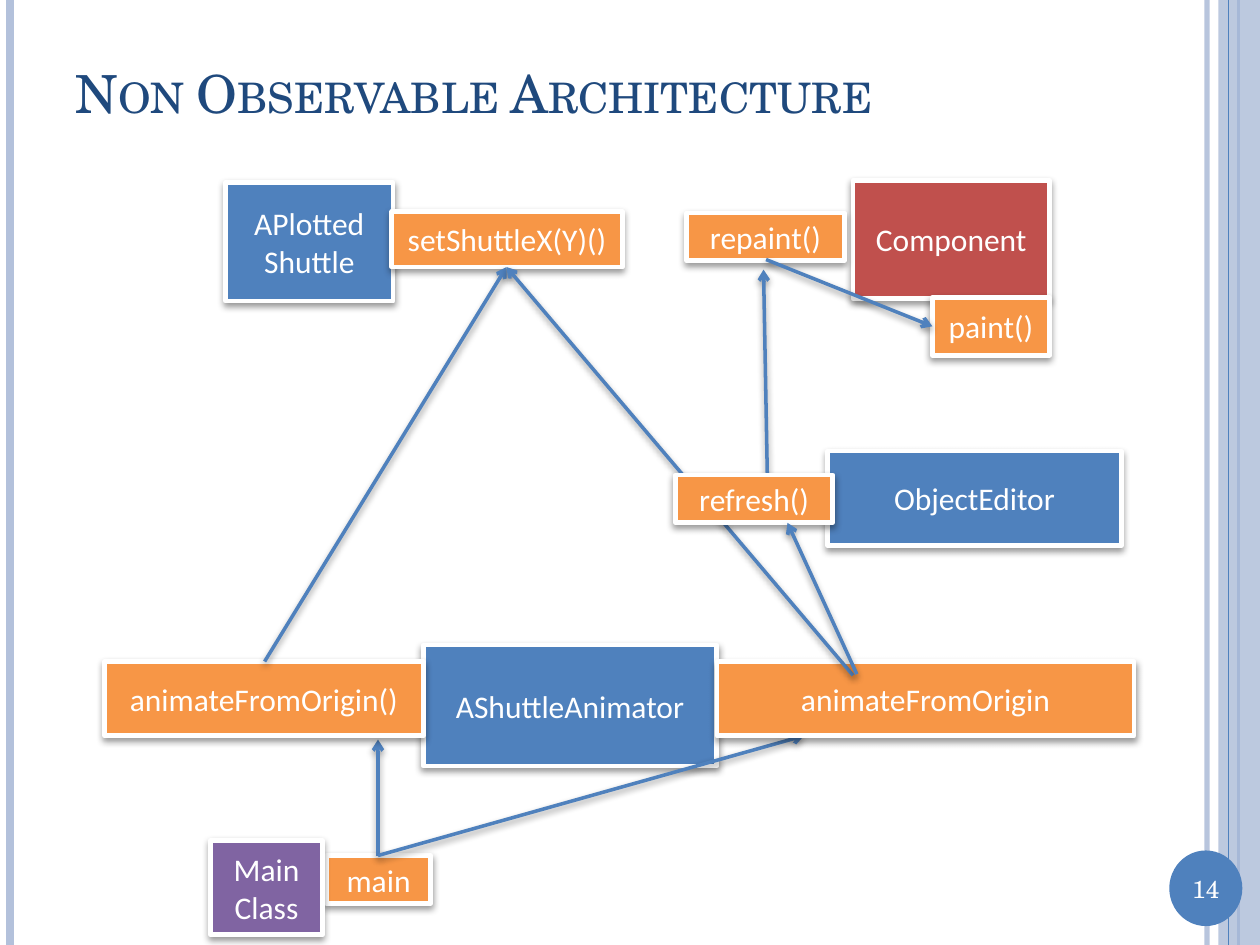
from dataclasses import dataclass

from lxml import etree
from pptx import Presentation
from pptx import util as u
from pptx.dml.color import RGBColor
from pptx.enum import shapes, text
from pptx.oxml import ns

WHITE = RGBColor(0xFF, 0xFF, 0xFF)
BLUE = RGBColor(0x4F, 0x81, 0xBD)
PALE = RGBColor(0xB3, 0xC1, 0xDB)
NAVY = RGBColor(0x1F, 0x49, 0x7D)
ORANGE = RGBColor(0xF7, 0x96, 0x46)
RED = RGBColor(0xC0, 0x50, 0x4D)
PURPLE = RGBColor(0x80, 0x64, 0xA2)
SERIF = "TeX Gyre Schola"
SANS = "Calibri"
SLIDE_H = 7.5


@dataclass
class Box:
    label: str
    left: float
    top: float
    width: float
    height: float
    color: RGBColor = ORANGE


@dataclass
class Call:
    """Arrow from a caller to the method it calls."""
    x1: float
    y1: float
    x2: float
    y2: float


@dataclass
class Rule:
    """Full-height decorative line."""
    x: float
    color: RGBColor
    width: float
    alpha: int = 100


LEFT_RULES = [Rule(9.58, PALE, 3, 93), Rule(0.08, PALE, 4.5), Rule(9.83, BLUE, 1.5)]
EDGE_RULE = Rule(9.75, BLUE, 0.75)

# Back to front
DIAGRAM = [
    Box("APlotted\nShuttle", 1.79, 1.45, 1.33, 0.94, BLUE),
    Box("AShuttleAnimator", 3.36, 5.12, 2.33, 0.96, BLUE),
    Box("main", 2.59, 6.79, 0.83, 0.38),
    Box("setShuttleX(Y)()", 3.11, 1.68, 1.83, 0.44),
    Call(3, 6.79, 3, 5.87),
    Box("Main Class", 1.67, 6.67, 0.89, 0.75, PURPLE),
    Box("Component", 6.77, 1.43, 1.56, 0.94, RED),
    Box("repaint()", 5.45, 1.69, 1.25, 0.38),
    Box("paint()", 7.4, 2.36, 0.93, 0.46),
    Box("animateFromOrigin()", 0.83, 5.25, 2.53, 0.59),
    Call(2.1, 5.25, 4.02, 2.12),
    Call(6.09, 3.77, 6.06, 2.14),
    Call(3, 6.79, 6.38, 5.84),
    Box("animateFromOrigin", 5.69, 5.25, 3.31, 0.59),
    Box("ObjectEditor", 6.57, 3.58, 2.33, 0.75, BLUE),
    Call(6.77, 5.36, 4.02, 2.12),
    Box("refresh()", 5.36, 3.77, 1.25, 0.38),
    Call(6.08, 2.06, 7.4, 2.59),
    Call(6.8, 5.35, 6.25, 4.15),
]


def add_child(parent, tag: str, **attrs):
    return etree.SubElement(parent, ns.qn(tag), **attrs)


def set_alpha(sp, percent: int) -> None:
    """Make the first colour of a shape or line partly transparent."""
    color = next(sp._element.spPr.iter(ns.qn("a:srgbClr")))
    add_child(color, "a:alpha", val=str(percent * 1000))


def add_shadow(sp) -> None:
    effects = add_child(sp._element.spPr, "a:effectLst")
    shadow = add_child(effects, "a:outerShdw", blurRad=str(u.Pt(4)), dist=str(u.Pt(2)),
                       dir="5400000", rotWithShape="0")
    color = add_child(shadow, "a:srgbClr", val="000000")
    add_child(color, "a:alpha", val="40000")


def write(sp, words: str, *, size: float, font: str, color: RGBColor,
          align=text.PP_ALIGN.CENTER, inset: float = 0.05, small_caps: bool = False) -> None:
    tf = sp.text_frame
    tf.word_wrap = True
    tf.vertical_anchor = text.MSO_ANCHOR.MIDDLE
    tf.margin_left = tf.margin_right = u.Inches(inset)
    tf.margin_top = tf.margin_bottom = u.Inches(0.05)
    tf.text = words
    for p in tf.paragraphs:
        p.alignment = align
        for r in p.runs:
            r.font.size = u.Pt(size)
            r.font.name = font
            r.font.color.rgb = color
            if small_caps:
                r.font._element.set("cap", "small")


def add_shape(s, kind, left: float, top: float, width: float, height: float, color: RGBColor):
    sp = s.shapes.add_shape(kind, *map(u.Inches, (left, top, width, height)))
    sp.fill.solid()
    sp.fill.fore_color.rgb = color
    sp.line.fill.background()
    return sp


def add_textbox(s, left: float, top: float, width: float, height: float):
    return s.shapes.add_textbox(*map(u.Inches, (left, top, width, height)))


def add_line(s, x1: float, y1: float, x2: float, y2: float, color: RGBColor, width: float):
    line = s.shapes.add_connector(shapes.MSO_CONNECTOR.STRAIGHT, *map(u.Inches, (x1, y1, x2, y2)))
    line.line.color.rgb = color
    line.line.width = u.Pt(width)
    return line


def draw_rule(s, rule: Rule) -> None:
    line = add_line(s, rule.x, 0, rule.x, SLIDE_H, rule.color, rule.width)
    add_child(line._element.spPr, "a:effectLst")
    if rule.alpha < 100:
        set_alpha(line, rule.alpha)


def draw_box(s, box: Box) -> None:
    sp = add_shape(s, shapes.MSO_SHAPE.RECTANGLE, box.left, box.top, box.width, box.height, box.color)
    sp.line.color.rgb = WHITE
    sp.line.width = u.Pt(2.75)
    add_shadow(sp)
    write(sp, box.label, size=18, font=SANS, color=WHITE)


def draw_call(s, call: Call) -> None:
    line = add_line(s, call.x1, call.y1, call.x2, call.y2, BLUE, 2)
    add_child(line.line._get_or_add_ln(), "a:tailEnd", type="arrow")
    add_shadow(line)


def draw_frame(s) -> None:
    """Side stripes and the page number."""
    for rule in LEFT_RULES:
        draw_rule(s, rule)
    band = add_shape(s, shapes.MSO_SHAPE.RECTANGLE, 9.67, 0, 0.33, SLIDE_H, PALE)
    band.shadow.inherit = False
    set_alpha(band, 87)
    draw_rule(s, EDGE_RULE)
    disc = add_shape(s, shapes.MSO_SHAPE.OVAL, 9.28, 6.75, 0.58, 0.6, BLUE)
    disc.shadow.inherit = False
    number = add_textbox(s, 9.28, 6.88, 0.58, 0.34)
    write(number, "14", size=14, font=SERIF, color=WHITE)


def main() -> None:
    prs = Presentation()
    prs.slide_width, prs.slide_height = u.Inches(10), u.Inches(SLIDE_H)
    s = prs.slides.add_slide(prs.slide_layouts[6])
    draw_frame(s)
    title = add_textbox(s, 0.5, 0.3, 8.67, 0.87)
    write(title, "Non Observable Architecture", size=30, font=SERIF, color=NAVY,
          align=text.PP_ALIGN.LEFT, inset=0.1, small_caps=True)
    for item in DIAGRAM:
        if isinstance(item, Box):
            draw_box(s, item)
        else:
            draw_call(s, item)
    prs.save("out.pptx")


if __name__ == "__main__":
    main()
